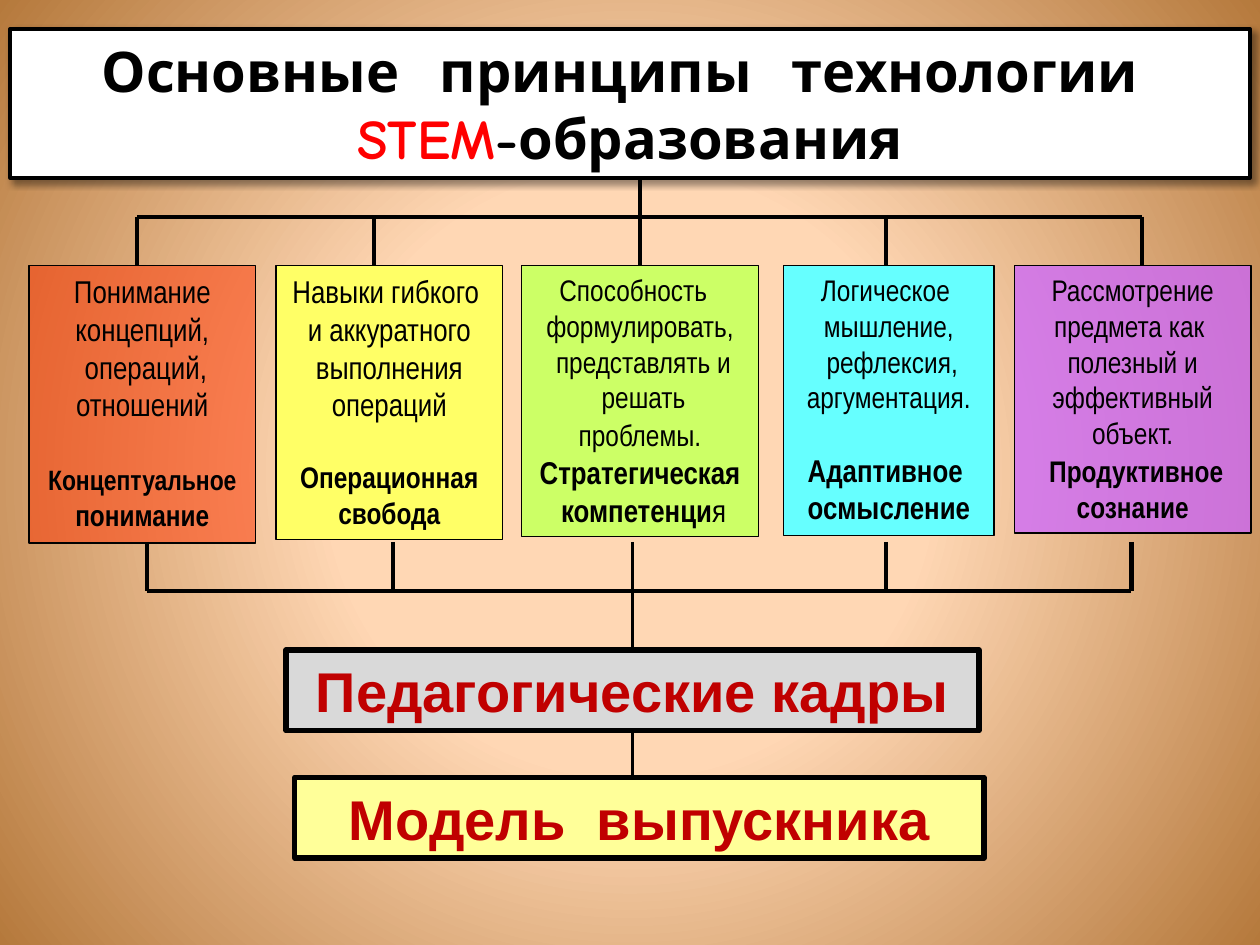
from dataclasses import dataclass
from typing import NamedTuple

from lxml.etree import SubElement
from pptx import Presentation
from pptx.dml.color import RGBColor
from pptx.enum.shapes import MSO_CONNECTOR, MSO_SHAPE
from pptx.enum.text import MSO_ANCHOR, PP_ALIGN
from pptx.oxml import parse_xml
from pptx.oxml.ns import nsdecls, qn
from pptx.util import Inches, Pt

COLORS = {
    "black": "000000", "white": "FFFFFF", "red": "FF0000", "dark_red": "C00000",
    "orange": "FF3300", "yellow": "FFFF66", "lime": "CCFF66", "cyan": "66FFFF",
    "violet": "CC66FF", "gray": "D9D9D9", "pale_yellow": "FFFF99",
    "bg_center": "FFD7B4", "bg_edge": "B5793C",
}
CARD_TOP, CARD_END = 2.11, 4.3
TOP_BUS, BOTTOM_BUS = 1.72, 4.69
STAFF_X = 5.02


class Run(NamedTuple):
    text: str
    size: float
    bold: bool = False


class Para(NamedTuple):
    runs: list[Run]
    before: float = 0


@dataclass
class Card:
    left: float
    width: float
    height: float
    fill: str
    paras: list[Para]
    alpha: int = 100


def lines(size: float, *texts: str) -> list[Para]:
    return [Para([Run(text, size)]) for text in texts]


CARDS = [
    Card(0.23, 1.8, 2.2, "orange", lines(18, "Понимание концепций,", " операций, отношений") + [
        Para([Run("Концептуальное", 16, True), Run(" понимание", 17, True)], 21.6)], 50),
    Card(2.19, 1.8, 2.17, "yellow",
         lines(18, "Навыки гибкого ", " и аккуратного ", "выполнения операций") + [
             Para([Run("Операционная свобода", 17, True)], 20.4)]),
    Card(4.14, 1.88, 2.15, "lime",
         lines(17, "Способность  ", "формулировать,", " представлять и") + [
             Para([Run(" решать проблемы.", 17), Run(" ", 18), Run("Стратегическая", 18, True)]),
             Para([Run(" компетенци", 18, True), Run("я", 18)])]),
    Card(6.22, 1.67, 2.14, "cyan",
         lines(17, "Логическое ", "мышление,", " рефлексия,", " аргументация. ") + [
             Para([Run("Адаптивное ", 18, True)], 20.4),
             Para([Run("осмысление", 18, True)])]),
    Card(8.05, 1.88, 2.12, "violet",
         lines(17, "Рассмотрение", "предмета как ", " полезный и ", "эффективный объект.") + [
             Para([Run(" ", 18, True), Run("Продуктивное", 17, True)]),
             Para([Run(" сознание ", 17, True)])], 75),
]


def rgb(name: str) -> RGBColor:
    return RGBColor.from_string(COLORS[name])


def add_run(p, text: str, *, size: float, font: str, color="black", bold=False) -> None:
    r = p.add_run()
    r.text = text
    r.font.size, r.font.name, r.font.bold = Pt(size), font, bold
    r.font.color.rgb = rgb(color)


def style_box(sp, fill: str, line_width: float, alpha=100) -> None:
    sp.fill.solid()
    sp.fill.fore_color.rgb = rgb(fill)
    sp.line.color.rgb = rgb("black")
    sp.line.width = Pt(line_width)
    if alpha < 100:
        color = sp.element.spPr.find(qn("a:solidFill"))[0]
        SubElement(color, qn("a:alpha"), val=str(alpha * 1000))


def add_box(s, left: float, top: float, width: float, height: float,
            fill: str, line_width: float, alpha=100):
    sp = s.shapes.add_shape(MSO_SHAPE.RECTANGLE, Inches(left), Inches(top),
                            Inches(width), Inches(height))
    sp.shadow.inherit = False
    style_box(sp, fill, line_width, alpha)
    sp.text_frame.word_wrap = True
    return sp


def add_card(s, card: Card):
    sp = add_box(s, card.left, CARD_TOP, card.width, card.height, card.fill, 0.75, card.alpha)
    tf = sp.text_frame
    tf.vertical_anchor = MSO_ANCHOR.TOP
    for i, para in enumerate(card.paras):
        p = tf.add_paragraph() if i else tf.paragraphs[0]
        p.alignment = PP_ALIGN.CENTER
        p.space_before = Pt(para.before)
        for run in para.runs:
            add_run(p, run.text, size=run.size, font="Arial Narrow", bold=run.bold)
    return sp


def add_result(s, left: float, top: float, width: float, fill: str, text: str):
    sp = add_box(s, left, top, width, 0.64, fill, 3)
    p = sp.text_frame.paragraphs[0]
    p.alignment = PP_ALIGN.CENTER
    add_run(p, text, size=32, font="Arial", color="dark_red", bold=True)
    return sp


def add_line(s, x1: float, y1: float, x2: float, y2: float, width=2.25):
    c = s.shapes.add_connector(MSO_CONNECTOR.STRAIGHT, Inches(x1), Inches(y1),
                               Inches(x2), Inches(y2))
    c.line.color.rgb = rgb("black")
    c.line.width = Pt(width)
    SubElement(c.element.spPr, qn("a:effectLst"))
    return c


def set_background(s) -> None:
    s.background.fill.gradient()
    grad = next(s.element.iter(qn("a:gradFill")))
    grad.getparent().replace(grad, parse_xml(
        f'<a:gradFill {nsdecls("a")} rotWithShape="1"><a:gsLst>'
        f'<a:gs pos="38000"><a:srgbClr val="{COLORS["bg_center"]}"/></a:gs>'
        f'<a:gs pos="100000"><a:srgbClr val="{COLORS["bg_edge"]}"/></a:gs></a:gsLst>'
        '<a:path path="circle"><a:fillToRect l="50000" t="50000" r="50000" b="50000"/>'
        '</a:path></a:gradFill>'))


def set_title(s) -> None:
    sp = s.shapes.title
    sp.left, sp.top, sp.width, sp.height = map(Inches, (0.08, 0.23, 9.84, 1.18))
    style_box(sp, "white", 2.25)
    sp.element.spPr.append(parse_xml(
        f'<a:effectLst {nsdecls("a")}><a:outerShdw blurRad="50800" dist="38100" dir="2700000" '
        f'algn="tl" rotWithShape="0"><a:srgbClr val="{COLORS["black"]}">'
        '<a:alpha val="40000"/></a:srgbClr></a:outerShdw></a:effectLst>'))
    tf = sp.text_frame
    style = {"size": 32, "font": "Comic Neue", "bold": True}
    add_run(tf.paragraphs[0], "Основные  принципы  технологии ", **style)
    p = tf.add_paragraph()
    add_run(p, "STEM", color="red", **style)
    add_run(p, "-образования", **style)
    for p in tf.paragraphs:
        p.alignment = PP_ALIGN.CENTER


def main() -> None:
    prs = Presentation()
    prs.slide_width, prs.slide_height = Inches(10), Inches(7.5)
    s = prs.slides.add_slide(prs.slide_layouts[5])
    set_background(s)
    set_title(s)

    # Principles and outcomes
    cards = [add_card(s, card) for card in CARDS]
    staff = add_result(s, 2.27, 5.16, 5.5, "gray", "Педагогические кадры")
    add_result(s, 2.34, 6.17, 5.47, "pale_yellow", "Модель  выпускника")

    # Branches from the title to the cards
    add_line(s, 5.08, 1.41, 5.08, CARD_TOP).end_connect(cards[2], 0)
    add_line(s, 1.09, TOP_BUS, 9.06, TOP_BUS)
    for x in (1.09, 2.97, 7.03, 9.06):
        add_line(s, x, TOP_BUS, x, CARD_TOP)

    # Branches from the cards to the outcomes
    for x, width in ((1.17, 2.25), (3.12, 2.25), (7.03, 2.25), (8.98, 3)):
        add_line(s, x, CARD_END, x, BOTTOM_BUS, width)
    add_line(s, 1.17, BOTTOM_BUS, 8.98, BOTTOM_BUS)
    add_line(s, STAFF_X, CARD_END, STAFF_X, 5.16).end_connect(staff, 0)
    add_line(s, STAFF_X, 5.8, STAFF_X, 6.17).begin_connect(staff, 2)

    prs.save("out.pptx")


if __name__ == "__main__":
    main()
